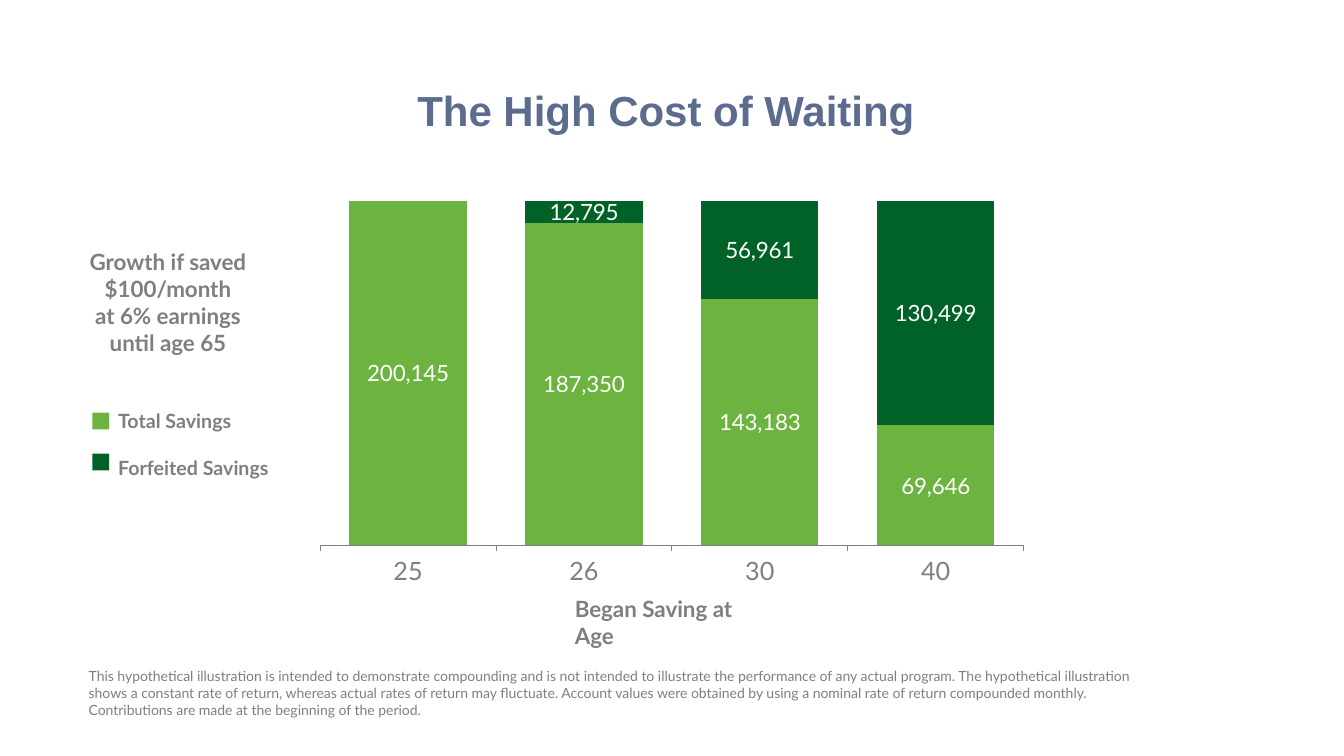
from lxml import etree
from pptx import Presentation
from pptx.chart.data import CategoryChartData
from pptx.dml.color import RGBColor
from pptx.enum.chart import XL_CHART_TYPE, XL_LABEL_POSITION, XL_TICK_MARK
from pptx.enum.shapes import MSO_SHAPE
from pptx.enum.text import MSO_ANCHOR, MSO_AUTO_SIZE, PP_ALIGN
from pptx.oxml.ns import qn
from pptx.util import Pt

STACK = XL_CHART_TYPE.COLUMN_STACKED
MID = XL_LABEL_POSITION.CENTER
NONE, OUT = XL_TICK_MARK.NONE, XL_TICK_MARK.OUTSIDE
RECT = MSO_SHAPE.RECTANGLE
MIDDLE = MSO_ANCHOR.MIDDLE
FIXED = MSO_AUTO_SIZE.NONE
LEFT, CENTER = PP_ALIGN.LEFT, PP_ALIGN.CENTER

PX = 9525
COLORS = {"title": "5C6C8E", "gray": "7F7F7F", "white": "FFFFFF",
          "total": "6CB33F", "lost": "006227"}
AGES = ["25", "26", "30", "40"]
SERIES = [("Total Savings", "total", [200145, 187350, 143183, 69646]),
          ("Forfeited Savings", "lost", [None, 12795, 56961, 130499])]
PLOT = {"x": 0.02, "y": 0.02, "w": 0.96, "h": 0.88}
NOTE = ("This hypothetical illustration is intended to demonstrate compounding "
        "and is not intended to illustrate the performance of any actual program. "
        "The hypothetical illustration shows a constant rate of return, whereas "
        "actual rates of return may fluctuate. Account values were obtained by "
        "using a nominal rate of return compounded monthly. Contributions are "
        "made at the beginning of the period.")


def color(key):
    """Return the named colour."""
    return RGBColor.from_string(COLORS[key])


def scale(box):
    """Turn a box in px into EMU."""
    return [side * PX for side in box]


def style(font, size, key, bold=False, face="Lato"):
    """Format a font."""
    font.name, font.size, font.bold = face, Pt(size), bold
    font.color.rgb = color(key)


def add_text(slide, box, lines, size, bold=True, align=LEFT):
    """Add a wrapped gray text box with one paragraph."""
    frame = slide.shapes.add_textbox(*scale(box)).text_frame
    frame.word_wrap = True
    para = frame.paragraphs[0]
    para.alignment = align
    for i, line in enumerate(lines):
        if i:
            para.add_line_break()
        run = para.add_run()
        run.text = line
        style(run.font, size, "gray", bold)
    return frame


def add_title(slide, box):
    """Place and fill the title."""
    title = slide.shapes.title
    title.left, title.top, title.width, title.height = scale(box)
    frame = title.text_frame
    frame.auto_size, frame.vertical_anchor = FIXED, MIDDLE
    para = frame.paragraphs[0]
    para.alignment, para.line_spacing = CENTER, 0.9
    run = para.add_run()
    run.text = "The High Cost of Waiting "
    style(run.font, 30, "title", True, "Arial")


def set_plot(chart):
    """Fix the inner plot area within the chart."""
    area = chart._chartSpace.find(".//" + qn("c:plotArea"))
    for old in area.findall(qn("c:layout")):
        area.remove(old)
    layout = etree.Element(qn("c:layout"))
    area.insert(0, layout)
    manual = etree.SubElement(layout, qn("c:manualLayout"))
    rules = [("layoutTarget", "inner"), ("xMode", "edge"), ("yMode", "edge")]
    for tag, val in rules + list(PLOT.items()):
        etree.SubElement(manual, qn("c:" + tag)).set("val", str(val))


def add_bars(slide, box):
    """Add the stacked savings chart."""
    data = CategoryChartData(number_format="#,##0")
    data.categories = AGES
    for name, _, vals in SERIES:
        data.add_series(name, vals)
    chart = slide.shapes.add_chart(STACK, *scale(box), data).chart
    chart.has_legend = chart.has_title = False
    style(chart.font, 18, "gray")
    set_plot(chart)

    axis = chart.value_axis
    axis.minimum_scale, axis.maximum_scale = 0, 250000
    axis.has_major_gridlines = axis.visible = False
    base = chart.category_axis
    base.major_tick_mark, base.minor_tick_mark = OUT, NONE
    base.format.line.color.rgb = color("gray")
    base.format.line.width = Pt(0.75)
    style(base.tick_labels.font, 18, "gray")

    plot = chart.plots[0]
    plot.gap_width, plot.overlap = 50, 100
    plot.vary_by_categories = False
    for bars, (_, key, _) in zip(plot.series, SERIES):
        bars.format.fill.solid()
        bars.format.fill.fore_color.rgb = color(key)
        labels = bars.data_labels
        labels.show_value, labels.position = True, MID
        labels.number_format = "#,##0"
        labels.number_format_is_linked = False
        style(labels.font, 16, "white")


def add_key(slide, box):
    """Add the colour key, its swatches to the left of its names."""
    left, top, width, height = box
    frame = add_text(slide, (left + 15, top, width - 15, height), [SERIES[0][0]], 14)
    para = frame.add_paragraph()
    para.line_spacing = 2
    run = para.add_run()
    run.text = SERIES[1][0]
    style(run.font, 14, "gray", True)
    for i, (_, key, _) in enumerate(SERIES):
        mark = slide.shapes.add_shape(RECT, *scale((left, top + 8 + 39 * i, 16, 16)))
        mark.shadow.inherit = False
        mark.fill.solid()
        mark.fill.fore_color.rgb = color(key)
        mark.line.fill.background()


def main():
    """Build and save the slide."""
    deck = Presentation()
    deck.slide_width, deck.slide_height = scale((1280, 720))
    slide = deck.slides.add_slide(deck.slide_layouts[5])
    add_title(slide, (88, 38, 1104, 139))
    add_text(slide, (75, 631, 1049, 59), [NOTE], 10, False)
    add_text(slide, (60, 232, 200, 113),
             ["Growth if saved $100/month", "at 6% earnings", "until age 65"],
             16, align=CENTER)
    add_text(slide, (538, 562, 204, 36), ["Began Saving at Age"], 16)
    add_bars(slide, (291, 100, 698, 466))
    add_key(slide, (88, 385, 188, 78))
    deck.save("out.pptx")


if __name__ == "__main__":
    main()
